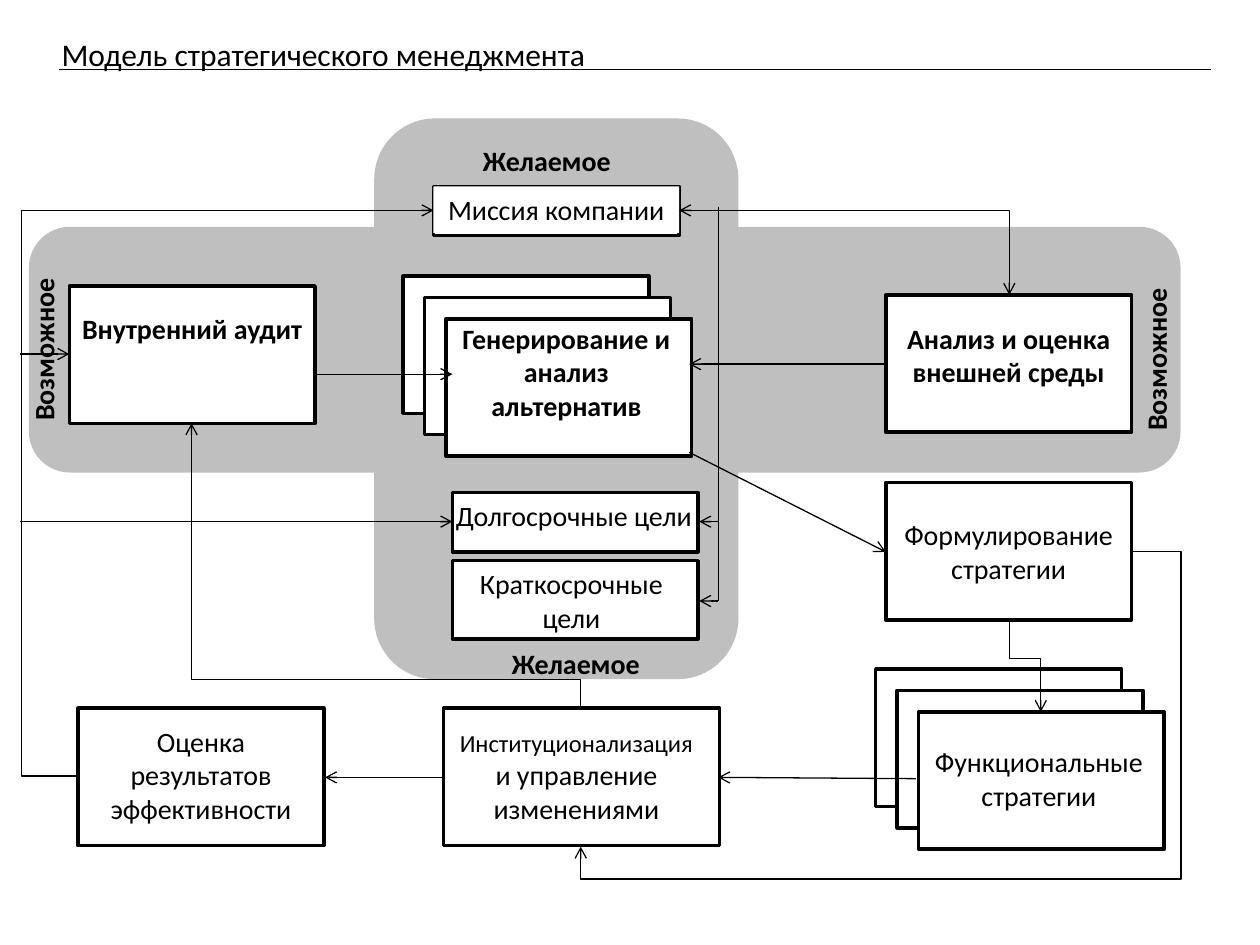
from lxml import etree
from pptx import Presentation
from pptx import util as u
from pptx.dml import color as col
from pptx.enum import shapes, text
from pptx.oxml import ns

BLACK, WHITE, GREY = "000000", "FFFFFF", "BFBFBF"
RECT, ROUND = shapes.MSO_SHAPE.RECTANGLE, shapes.MSO_SHAPE.ROUNDED_RECTANGLE
LEFT, MID = text.PP_ALIGN.LEFT, text.PP_ALIGN.CENTER
BOX_W, BOX_H = 1.95, 1.09
STEP = 0.17


def paint(part, hue):
    """Colour a fill or a font."""
    if hasattr(part, "solid"):
        part.solid()
        part = part.fore_color
    else:
        part = part.color
    part.rgb = col.RGBColor.from_string(hue)


def put(obj, values):
    for name, value in values.items():
        setattr(obj, name, value)


def box(slide, x, y, w=BOX_W, h=BOX_H, kind=RECT, fill=WHITE, edge=2):
    shape = slide.shapes.add_shape(kind, *map(u.Inches, (x, y, w, h)))
    shape.shadow.inherit = False
    paint(shape.fill, fill)
    if edge:
        paint(shape.line, BLACK)
        shape.line.width = u.Pt(edge)
    else:
        shape.line.fill.background()


def stack(slide, x, y):
    """Three sheets, each shifted down and right."""
    for i in range(3):
        box(slide, x + i * STEP, y + i * STEP)


def label(slide, words, x, y, w, h, bold=False, size=16, align=MID,
          turn=0, fill=None):
    """Words is a list of paragraphs, each a string or (text, size) runs."""
    area = slide.shapes.add_textbox(*map(u.Inches, (x, y, w, h)))
    area.rotation = turn
    if fill:
        paint(area.fill, fill)
    frame = area.text_frame
    put(frame, {"word_wrap": True,
                "auto_size": text.MSO_AUTO_SIZE.SHAPE_TO_FIT_TEXT})
    for i, item in enumerate(words):
        para = frame.add_paragraph() if i else frame.paragraphs[0]
        para.alignment = align
        runs = [(item, size)] if isinstance(item, str) else item
        for part, pts in runs:
            run = para.add_run()
            run.text = part
            put(run.font, {"name": "Calibri", "size": u.Pt(pts),
                           "bold": bold})
            paint(run.font, BLACK)


def link(slide, x1, y1, x2, y2, ends="t", bend=0, adj=(), tall=False):
    """Line or elbow; ends holds h and t for arrowheads, bend counts legs.

    A tall elbow leaves vertically, so its frame is turned by 270 degrees.
    """
    if tall:
        mx, my = (x1 + x2) / 2, (y1 + y2) / 2
        dx, dy = (x2 - x1) / 2, (y2 - y1) / 2
        x1, y1, x2, y2 = mx + dy, my - dx, mx - dy, my + dx
    kinds = shapes.MSO_CONNECTOR
    line = slide.shapes.add_connector(
        kinds.ELBOW if bend else kinds.STRAIGHT,
        *map(u.Inches, (x1, y1, x2, y2)))
    paint(line.line, BLACK)
    line.line.width = u.Pt(0.75)
    props = line._element.spPr
    if tall:
        props.find(ns.qn("a:xfrm")).set("rot", str(270 * 60000))
    if bend:
        geom = props.find(ns.qn("a:prstGeom"))
        geom.set("prst", f"bentConnector{bend}")
        guides = geom.find(ns.qn("a:avLst"))
        for i, value in enumerate(adj, 1):
            etree.SubElement(guides, ns.qn("a:gd"), name=f"adj{i}",
                             fmla=f"val {round(value * 100000)}")
    stroke = props.find(ns.qn("a:ln"))
    for key, tag in (("h", "a:headEnd"), ("t", "a:tailEnd")):
        if key in ends:
            etree.SubElement(stroke, ns.qn(tag), type="arrow")
    etree.SubElement(props, ns.qn("a:effectLst"))


def boxes(slide):
    # Grey cross
    box(slide, 0.23, 1.8, 9.14, 1.95, ROUND, GREY, 0)
    box(slide, 2.97, 0.94, 2.89, 4.45, ROUND, GREY, 0)
    # Alternatives, mission, audits and strategy
    stack(slide, 3.2, 2.19)
    box(slide, 3.44, 1.48, h=0.39)
    for x, y in ((7.03, 2.34), (0.55, 2.27), (7.03, 3.83)):
        box(slide, x, y)
    # Bottom row
    stack(slide, 6.95, 5.31)
    box(slide, 3.52, 5.62, w=2.19)
    box(slide, 0.62, 5.62)
    # Goals
    box(slide, 3.59, 3.91, h=0.47)
    box(slide, 3.59, 4.45, h=0.62)


def labels(slide):
    label(slide, ["Миссия компании"], 3.44, 1.48, BOX_W, 0.37, fill=WHITE)
    # Bold headings of the middle band
    for words, x, y, h in (
            ("Анализ и оценка внешней среды", 7.03, 2.5, 0.64),
            ("Генерирование и анализ альтернатив", 3.52, 2.5, 0.91),
            ("Внутренний аудит", 0.55, 2.42, 0.64)):
        label(slide, [words], x, y, BOX_W, h, bold=True)
    # Goals
    label(slide, ["Долгосрочные цели"], 3.52, 3.91, 2.11, 0.37, align=LEFT)
    label(slide, ["Краткосрочные", "цели"], 3.44, 4.45, 2.19, 0.64)
    # Strategy and results
    label(slide, [[("Институционализация", 14),
                   (" и управление изменениями", 16)]],
          3.52, 5.7, 2.11, 0.9)
    for words, x, y, h in (
            ("Формулирование стратегии", 7.03, 4.06, 0.64),
            ("Функциональные стратегии", 7.27, 5.86, 0.64),
            ("Оценка результатов эффективности", 0.62, 5.7, 0.91)):
        label(slide, [words], x, y, BOX_W, h)
    # Names of the arms of the cross
    for x, y in ((-0.79, 2.59), (8.04, 2.67)):
        label(slide, ["Возможное"], x, y, 2.27, 0.37, bold=True, turn=270)
    for x, y in ((3.52, 1.09), (3.75, 5.08)):
        label(slide, ["Желаемое"], x, y, 1.64, 0.37, bold=True)


def links(slide):
    # Mission to outer analysis and to goals
    link(slide, 5.39, 1.67, 8.01, 2.34, ends="ht", bend=2)
    link(slide, 5.7, 1.64, 5.7, 4.77, ends="")
    for y in (4.14, 4.77):
        link(slide, 5.7, y, 5.55, y)
    # Straight arrows
    for ends in ((7.03, 2.89, 5.47, 2.89), (5.47, 3.59, 7.03, 4.38),
                 (2.5, 2.97, 3.59, 2.97), (0.16, 2.81, 0.55, 2.81),
                 (0.16, 4.14, 3.59, 4.14), (3.52, 6.17, 2.58, 6.17),
                 (7.27, 6.18, 5.7, 6.17)):
        link(slide, *ends)
    # Feedback from results to mission, and from changes to audit
    link(slide, 0.62, 6.16, 3.44, 1.67, bend=3, adj=[-0.16])
    link(slide, 4.61, 5.62, 1.52, 3.36, bend=3, adj=[0.1], tall=True)
    # Strategy to its functions and to changes
    link(slide, 8.01, 4.92, 8.26, 5.65, bend=3, adj=[0.42], tall=True)
    link(slide, 8.98, 4.38, 4.61, 6.72, bend=4, adj=[-0.09, 1.11])


def main():
    deck = Presentation()
    put(deck, {"slide_width": u.Inches(10), "slide_height": u.Inches(7.5)})
    slide = deck.slides.add_slide(deck.slide_layouts[6])
    boxes(slide)
    labels(slide)
    links(slide)
    # Title with its rule
    label(slide, ["Модель стратегического менеджмента"],
          0.39, 0.23, 9.14, 0.4, size=18, align=LEFT)
    link(slide, 0.47, 0.55, 9.61, 0.55, ends="")
    deck.save("out.pptx")


if __name__ == "__main__":
    main()
